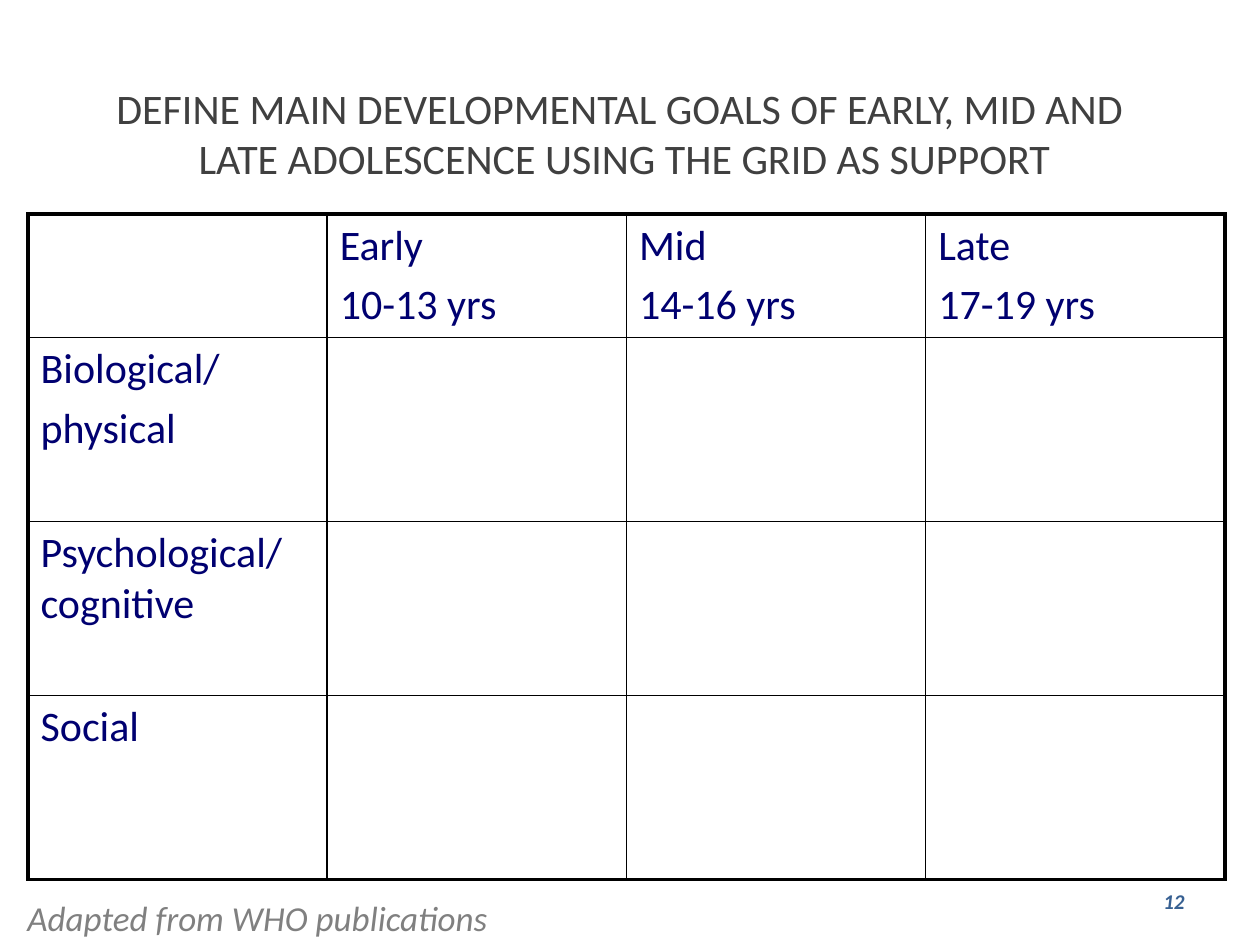
from typing import NamedTuple

from lxml import etree
from pptx import Presentation
from pptx import util as u
from pptx.dml.color import RGBColor
from pptx.enum import text as t
from pptx.oxml.ns import qn

PX = 914400 / 126  # EMU in one pixel


class Box(NamedTuple):
    left: int
    top: int
    width: int
    height: int


class Look(NamedTuple):
    size: int
    color: str
    bold: bool = False
    italic: bool = False
    align: t.PP_ALIGN = t.PP_ALIGN.LEFT


class Note(NamedTuple):
    words: str
    box: Box
    look: Look
    anchor: t.MSO_ANCHOR
    wrap: bool


def px(n: int) -> int:
    return round(n * PX)


def rgb(code: str) -> RGBColor:
    return RGBColor.from_string(code)


def put(frame, words: str, look: Look) -> None:
    frame.text = words
    for para in frame.paragraphs:
        para.alignment = look.align
        for run in para.runs:
            font = run.font
            font.name, font.size = "Calibri", u.Pt(look.size)
            font.bold, font.italic = look.bold, look.italic
            font.color.rgb = rgb(look.color)


def place(shape, note: Note) -> None:
    shape.left, shape.top, shape.width, shape.height = map(px, note.box)
    frame = shape.text_frame
    put(frame, note.words, note.look)
    frame.word_wrap = note.wrap
    frame.vertical_anchor = note.anchor
    frame.auto_size = t.MSO_AUTO_SIZE.NONE


def edge(cell, side: str, width: float) -> None:
    line = etree.SubElement(cell._tc.get_or_add_tcPr(), qn(f"a:ln{side}"),
                            w=str(u.Pt(width)))
    fill = etree.SubElement(line, qn("a:solidFill"))
    etree.SubElement(fill, qn("a:srgbClr"), val="000000")


def grid(slide, box: Box, rows: list[int], cells: list[list[str]]) -> None:
    count = len(cells[0])
    table = slide.shapes.add_table(len(rows), count, *map(px, box)).table
    table.first_row = table.horz_banding = False
    for col in table.columns:
        col.width = px(box.width) // count
    for r, (high, line) in enumerate(zip(rows, cells)):
        table.rows[r].height = px(high)
        for c, words in enumerate(line):
            cell = table.cell(r, c)
            # Heavy outer frame, thin inner lines
            outer = {"L": c == 0, "R": c == count - 1,
                     "T": r == 0, "B": r == len(rows) - 1}
            for side, heavy in outer.items():
                edge(cell, side, 2.25 if heavy else 1)
            cell.fill.background()
            if words:
                put(cell.text_frame, words, BODY)
                for para in cell.text_frame.paragraphs:
                    para.space_before = u.Pt(4.8)


BODY = Look(24, "000070")
TITLE = Note("DEFINE MAIN DEVELOPMENTAL GOALS OF EARLY, MID AND \v"
             "LATE ADOLESCENCE USING THE GRID AS SUPPORT",
             Box(60, 76, 1129, 165),
             Look(24, "404040", align=t.PP_ALIGN.CENTER),
             t.MSO_ANCHOR.TOP, False)
NOTES = [
    Note("12", Box(903, 876, 294, 50),
         Look(12, "376092", True, True, t.PP_ALIGN.RIGHT),
         t.MSO_ANCHOR.MIDDLE, True),
    Note("Adapted from WHO publications", Box(15, 890, 496, 55),
         Look(20, "808080", italic=True), t.MSO_ANCHOR.TOP, False),
]
ROWS = [123, 184, 174, 184]
CELLS = [
    ["", "Early\n10-13 yrs", "Mid\n14-16 yrs", "Late\n17-19 yrs"],
    ["Biological/\nphysical", "", "", ""],
    ["Psychological/cognitive", "", "", ""],
    ["Social", "", "", ""],
]


def main() -> None:
    deck = Presentation()
    deck.slide_width, deck.slide_height = u.Inches(10), u.Inches(7.5)
    slide = deck.slides.add_slide(deck.slide_layouts[5])

    # Heading
    place(slide.shapes.title, TITLE)

    # Goals by age and domain
    grid(slide, Box(28, 214, 1197, sum(ROWS)), ROWS, CELLS)

    # Page number and source line
    for note in NOTES:
        place(slide.shapes.add_textbox(0, 0, 0, 0), note)

    deck.save("out.pptx")


if __name__ == "__main__":
    main()
